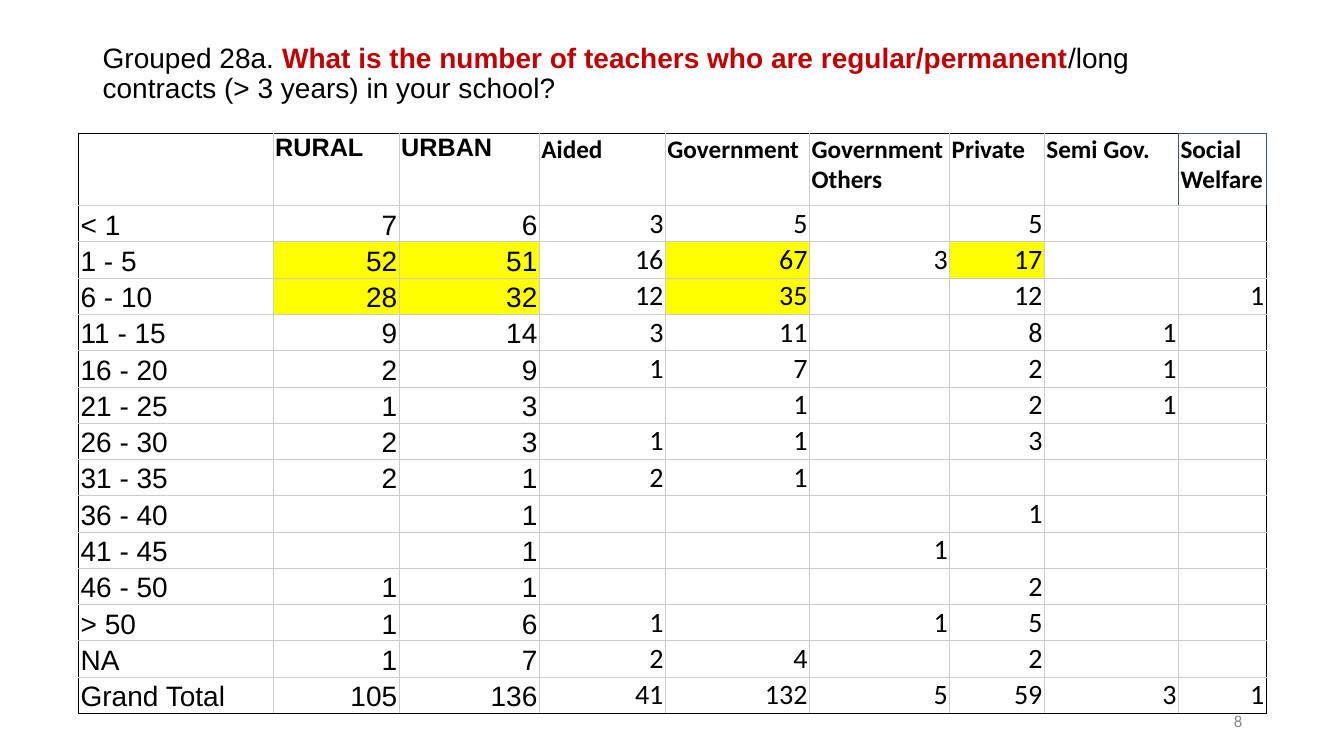
import pptx
import pptx.dml.color
import pptx.enum.text
import pptx.oxml
import pptx.oxml.ns
import pptx.util

Inches = pptx.util.Inches
Pt = pptx.util.Pt
ALIGN = pptx.enum.text.PP_ALIGN
ANCHOR = pptx.enum.text.MSO_ANCHOR

TITLE = [
    ("Grouped 28a. ", "000000", False),
    ("What is the number of teachers who are regular/permanent", "C00000", True),
    ("/long contracts (> 3 years) in your school?", "000000", False),
]
COL_WIDTHS = [1.93, 1.25, 1.39, 1.25, 1.43, 1.39, 0.94, 1.33, 0.87]
ROWS = [
    ["", "RURAL", "URBAN", "Aided", "Government", "Government Others", "Private", "Semi Gov.", "Social Welfare"],
    ["< 1", "7", "6", "3", "5", "", "5", "", ""],
    ["1 - 5", "52", "51", "16", "67", "3", "17", "", ""],
    ["6 - 10", "28", "32", "12", "35", "", "12", "", "1"],
    ["11 - 15", "9", "14", "3", "11", "", "8", "1", ""],
    ["16 - 20", "2", "9", "1", "7", "", "2", "1", ""],
    ["21 - 25", "1", "3", "", "1", "", "2", "1", ""],
    ["26 - 30", "2", "3", "1", "1", "", "3", "", ""],
    ["31 - 35", "2", "1", "2", "1", "", "", "", ""],
    ["36 - 40", "", "1", "", "", "", "1", "", ""],
    ["41 - 45", "", "1", "", "", "1", "", "", ""],
    ["46 - 50", "1", "1", "", "", "", "2", "", ""],
    ["> 50", "1", "6", "1", "", "1", "5", "", ""],
    ["NA", "1", "7", "2", "4", "", "2", "", ""],
    ["Grand Total", "105", "136", "41", "132", "5", "59", "3", "1"],
]
HIGHLIGHTS = {(2, 1), (2, 2), (2, 4), (2, 6), (3, 1), (3, 2), (3, 4)}


def color(value):
    return pptx.dml.color.RGBColor.from_string(value)


class SlideBuilder:
    """Builds text boxes and a bordered table on one slide."""

    ink, grid, accent, mark = "000000", "CCCCCC", "405479", "FFFF00"

    def __init__(self, s):
        self.s = s

    def style(self, r, size, font, fill=ink, bold=False):
        r.font.size = Pt(size)
        r.font.name = font
        r.font.bold = bold
        r.font.color.rgb = color(fill)

    def text(self, box, runs, size, font, align=ALIGN.LEFT, spacing=1.0):
        sp = self.s.shapes.add_textbox(*map(Inches, box))
        tf = sp.text_frame
        tf.word_wrap = True
        tf.vertical_anchor = ANCHOR.MIDDLE
        p = tf.paragraphs[0]
        p.alignment = align
        p.line_spacing = spacing
        for words, fill, bold in runs:
            r = p.add_run()
            r.text = words
            self.style(r, size, font, fill, bold)

    def borders(self, cell, **sides):
        tcPr = cell._tc.get_or_add_tcPr()
        for side, value in sides.items():
            tcPr.append(pptx.oxml.parse_xml(
                f'<a:ln{side} {pptx.oxml.ns.nsdecls("a")} w="{Pt(0.75)}"><a:solidFill>'
                f'<a:srgbClr val="{value}"/></a:solidFill></a:ln{side}>'))

    def cell(self, cell, words, header, label, arial, marked):
        cell.margin_left = cell.margin_right = Inches(0.02)
        cell.margin_top = cell.margin_bottom = Inches(0.01)
        cell.vertical_anchor = ANCHOR.TOP if header else ANCHOR.BOTTOM
        if marked:
            cell.fill.solid()
            cell.fill.fore_color.rgb = color(self.mark)
        else:
            cell.fill.background()
        if words:
            cell.text_frame.text = words
            p = cell.text_frame.paragraphs[0]
            p.alignment = ALIGN.LEFT if header or label else ALIGN.RIGHT
            self.style(p.runs[0], 18 if header else 20, "Arial" if arial else "Calibri", bold=header)

    def table(self, left, top, widths, rows, header_height, row_height, highlights):
        heights = [header_height] + [row_height] * (len(rows) - 1)
        box = map(Inches, (left, top, sum(widths), sum(heights)))
        table = self.s.shapes.add_table(len(rows), len(widths), *box).table
        table.first_row = table.horz_banding = False
        for column, width in zip(table.columns, widths):
            column.width = Inches(width)
        for row, height in zip(table.rows, heights):
            row.height = Inches(height)
        last_row, last_col = len(rows) - 1, len(widths) - 1
        for i, row in enumerate(rows):
            for j, words in enumerate(row):
                cell = table.cell(i, j)
                corner = i == 0 and j == last_col
                edge = self.accent if i == 0 else self.ink
                beside_corner = i == 0 and j == last_col - 1
                self.borders(
                    cell,
                    L=self.ink if j == 0 else self.accent if corner else self.grid,
                    R=edge if j == last_col else self.accent if beside_corner else self.grid,
                    T=self.accent if corner else self.ink if i == 0 else self.grid,
                    B=self.ink if i == last_row else self.grid)
                self.cell(cell, words, i == 0, j == 0, j < 3, (i, j) in highlights)


def main():
    prs = pptx.Presentation()
    prs.slide_width, prs.slide_height = Inches(13.33), Inches(7.5)
    slide = SlideBuilder(prs.slides.add_slide(prs.slide_layouts[6]))
    slide.text((0.92, 0.4, 11.5, 0.68), TITLE, 20, "Arial", spacing=0.9)
    slide.table(0.78, 1.32, COL_WIDTHS, ROWS, 0.72, 0.36, HIGHLIGHTS)
    slide.text((9.42, 6.95, 3, 0.4), [("8", "888888", False)], 12, "Calibri", ALIGN.RIGHT)
    prs.save("out.pptx")


if __name__ == "__main__":
    main()
